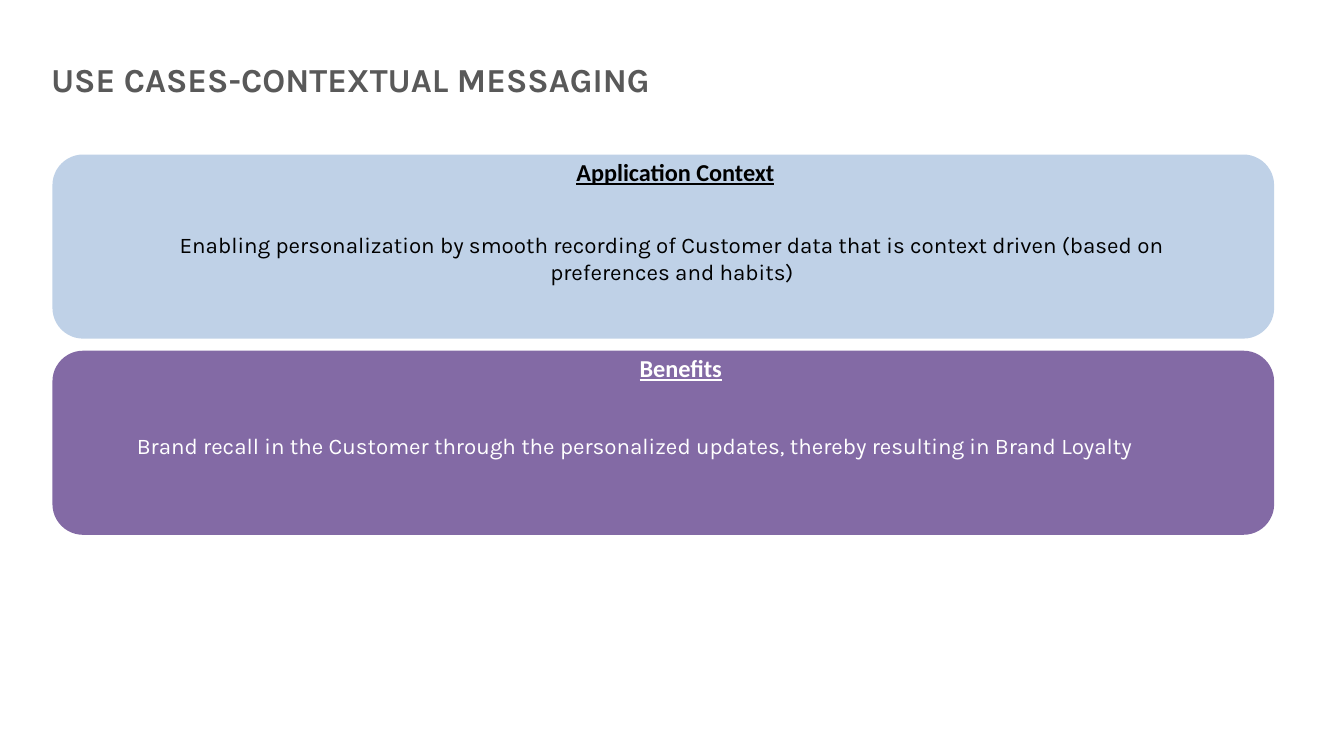
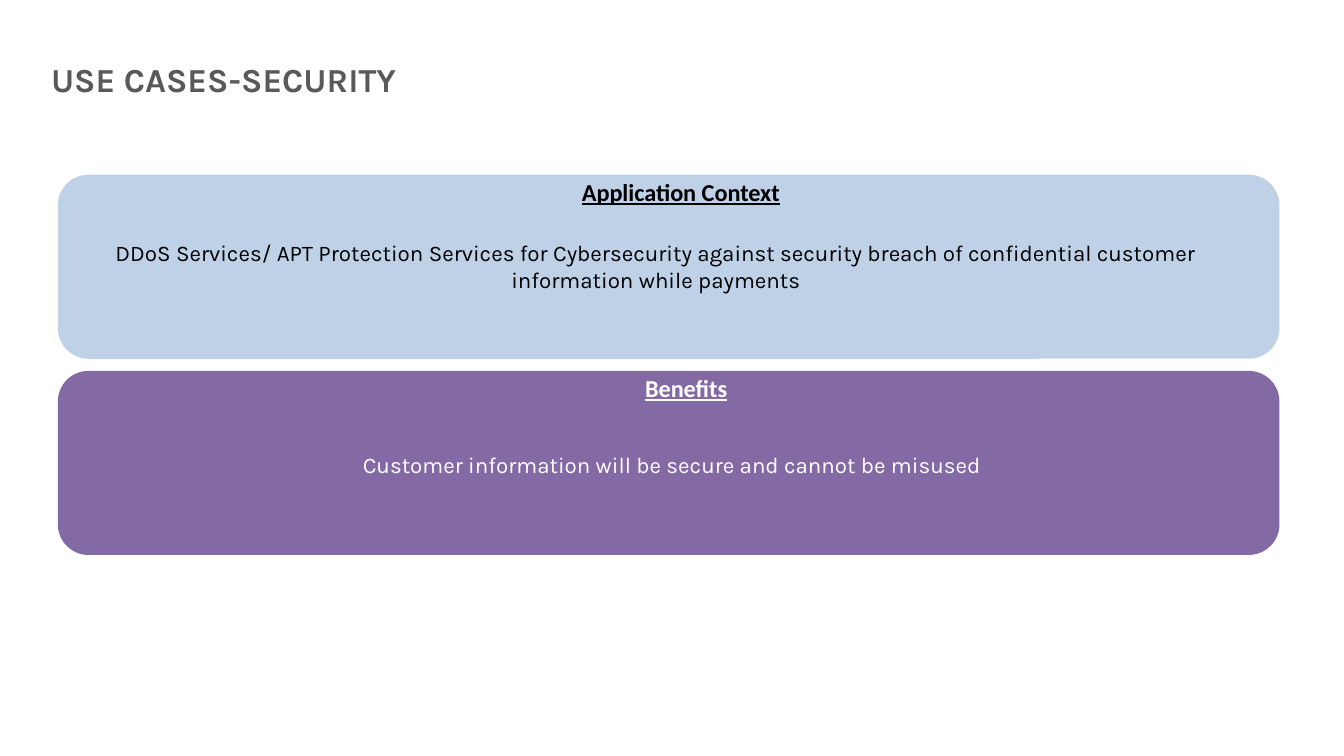
from dataclasses import dataclass

from pptx import Presentation
from pptx.dml.color import RGBColor
from pptx.enum import shapes, text
from pptx.util import Inches, Pt

LEFT, MID = text.PP_ALIGN.LEFT, text.PP_ALIGN.CENTER


@dataclass(frozen=True)
class Font:
    name: str
    size: int
    bold: bool = False
    line: bool = False


@dataclass(frozen=True)
class Theme:
    grey: str = "595959"
    black: str = "000000"
    white: str = "FFFFFF"
    blue: str = "BFD1E7"
    purple: str = "836AA5"
    title: Font = Font("Karla", 18, bold=True)
    head: Font = Font("Calibri", 13, bold=True, line=True)
    body: Font = Font("Karla", 12)


@dataclass(frozen=True)
class Card:
    """Wording of one band; area is the body box relative to the band."""
    head: str
    body: str
    area: tuple
    align: int = MID


T = Theme()
CARD_W, CARD_H, STEP = 9.09, 1.37, 1.46
# fill, text colour and heading offset of the upper and lower band
STYLES = [(T.blue, T.black, 3.64), (T.purple, T.white, 3.68)]

SLIDES = [
    ("USE CASES-CONTEXTUAL MESSAGING", (0.39, 1.15), [
        Card("Application Context",
             "Enabling personalization by smooth recording of Customer data "
             "that is context driven (based on preferences and habits)",
             (0.7, 0.52, 7.82, 0.5)),
        Card("Benefits",
             "Brand recall in the Customer through the personalized updates, "
             "thereby resulting in Brand Loyalty",
             (0.53, 0.56, 8.44, 0.3), LEFT),
    ]),
    ("USE CASES-SECURITY", (0.43, 1.3), [
        Card("Application Context",
             "DDoS Services/ APT Protection Services for Cybersecurity against "
             "security breach of confidential customer information while payments",
             (-0.04, 0.43, 8.98, 0.5)),
        Card("Benefits",
             "Customer information will be secure and cannot be misused",
             (0.29, 0.55, 8.56, 0.3)),
    ]),
]


def add_text(slide, box, words, font, color, align=MID, pad=(0.1, 0.05)):
    frame = slide.shapes.add_textbox(*map(Inches, box)).text_frame
    frame.word_wrap = True
    frame.auto_size = text.MSO_AUTO_SIZE.SHAPE_TO_FIT_TEXT
    frame.margin_left = frame.margin_right = Inches(pad[0])
    frame.margin_top = frame.margin_bottom = Inches(pad[1])
    para = frame.paragraphs[0]
    para.alignment = align
    run = para.add_run()
    run.text = words
    run.font.name, run.font.size = font.name, Pt(font.size)
    run.font.bold, run.font.underline = font.bold, font.line
    run.font.color.rgb = RGBColor.from_string(color)


def add_title(slide, words):
    add_text(slide, (0.3, 0.4, 8.21, 0.38), words, T.title, T.grey,
             LEFT, (0.08, 0.04))


def add_card(slide, left, top, card, style):
    fill, color, shift = style
    band = slide.shapes.add_shape(
        shapes.MSO_SHAPE.ROUNDED_RECTANGLE,
        *map(Inches, (left, top, CARD_W, CARD_H)))
    band.shadow.inherit = False
    band.fill.solid()
    band.fill.fore_color.rgb = RGBColor.from_string(fill)
    band.line.fill.background()
    add_text(slide, (left + shift, top - 0.03, 1.99, 0.32),
             card.head, T.head, color)
    x, y, wide, high = card.area
    add_text(slide, (left + x, top + y, wide, high),
             card.body, T.body, color, card.align)


def add_case(deck, title, origin, cards):
    slide = deck.slides.add_slide(deck.slide_layouts[6])
    add_title(slide, title)
    left, top = origin
    for row, (card, style) in enumerate(zip(cards, STYLES)):
        add_card(slide, left, top + row * STEP, card, style)


def main():
    deck = Presentation()
    deck.slide_width = Inches(10)
    deck.slide_height = deck.slide_width * 9 // 16
    for case in SLIDES:
        add_case(deck, *case)
    deck.save("out.pptx")


if __name__ == "__main__":
    main()
